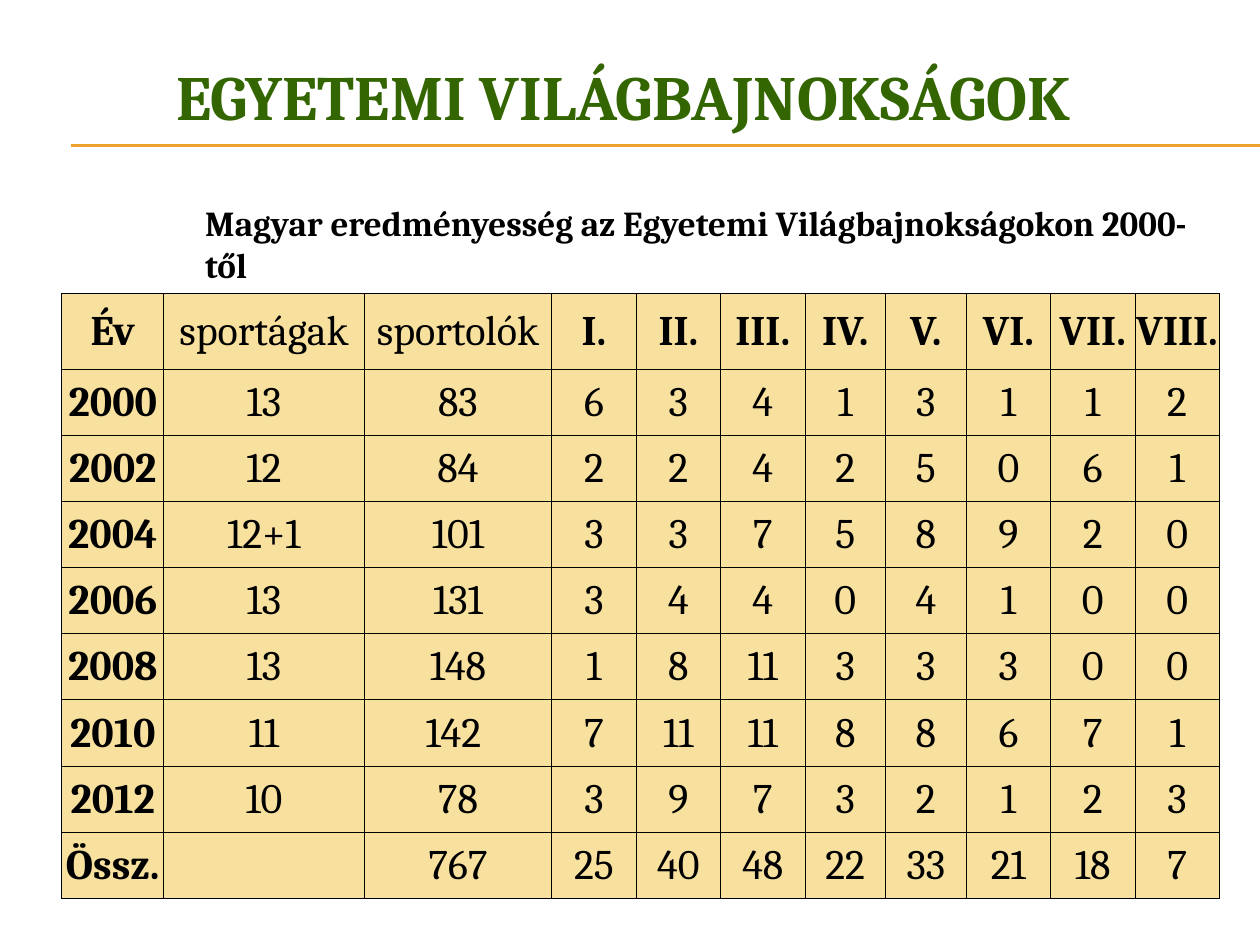
from dataclasses import dataclass

from lxml import etree
from pptx import Presentation
from pptx.dml.color import RGBColor
from pptx.enum import shapes, text
from pptx.oxml import ns
from pptx.util import Inches, Pt


@dataclass(frozen=True)
class Theme:
    font: str = "Cambria"
    title: RGBColor = RGBColor(0x33, 0x66, 0x00)
    ink: RGBColor = RGBColor(0x00, 0x00, 0x00)
    rule: RGBColor = RGBColor(0xF0, 0xA2, 0x2E)
    cell: RGBColor = RGBColor(0xF8, 0xE1, 0x9F)
    title_size: Pt = Pt(36)
    subtitle_size: Pt = Pt(20)
    table_size: Pt = Pt(24)
    rule_width: Pt = Pt(0.75)
    border_width: Pt = Pt(0.5)


theme = Theme()


def format_text(paragraph, size, color, bold, align=text.PP_ALIGN.LEFT):
    paragraph.alignment = align
    for run in paragraph.runs:
        run.font.name = theme.font
        run.font.size = size
        run.font.bold = bold
        run.font.color.rgb = color


def add_borders(cell):
    """Draw all four cell borders; they must come before the fill in tcPr."""
    properties = cell._tc.get_or_add_tcPr()
    for position, side in enumerate(("a:lnL", "a:lnR", "a:lnT", "a:lnB")):
        border = etree.Element(ns.qn(side), w=str(theme.border_width))
        fill = etree.SubElement(border, ns.qn("a:solidFill"))
        etree.SubElement(fill, ns.qn("a:srgbClr"), val=str(theme.ink))
        properties.insert(position, border)


presentation = Presentation()
presentation.slide_width = Inches(10)
presentation.slide_height = Inches(7.5)
slide = presentation.slides.add_slide(presentation.slide_layouts[5])

# Double rule under the title
for y in (1.15, 1.16):
    rule = slide.shapes.add_connector(
        shapes.MSO_CONNECTOR.STRAIGHT, Inches(0.56), Inches(y), Inches(10), Inches(y))
    rule.line.color.rgb = theme.rule
    rule.line.width = theme.rule_width
    etree.SubElement(rule._element.spPr, ns.qn("a:effectLst"))

# Title and subtitle
title = slide.shapes.title
title.left, title.top = Inches(1.3), Inches(0.36)
title.width, title.height = Inches(8.7), Inches(0.79)
title.text_frame.text = "EGYETEMI VILÁGBAJNOKSÁGOK"
title.text_frame.auto_size = text.MSO_AUTO_SIZE.NONE
title.text_frame.vertical_anchor = text.MSO_ANCHOR.MIDDLE
format_text(title.text_frame.paragraphs[0], theme.title_size, theme.title, True)

subtitle = slide.shapes.add_textbox(Inches(1.53), Inches(1.55), Inches(8.19), Inches(0.44))
subtitle.text_frame.word_wrap = True
subtitle.text_frame.text = "Magyar eredményesség az Egyetemi Világbajnokságokon 2000-től"
format_text(subtitle.text_frame.paragraphs[0], theme.subtitle_size, theme.ink, True)

# Results: year, sports, athletes, then the number of places I to VIII
results = [
    ["Év", "sportágak", "sportolók", "I.", "II.", "III.", "IV.", "V.", "VI.", "VII.", "VIII."],
    ["2000", "13", "83", 6, 3, 4, 1, 3, 1, 1, 2],
    ["2002", "12", "84", 2, 2, 4, 2, 5, 0, 6, 1],
    ["2004", "12+1", "101", 3, 3, 7, 5, 8, 9, 2, 0],
    ["2006", "13", "131", 3, 4, 4, 0, 4, 1, 0, 0],
    ["2008", "13", "148", 1, 8, 11, 3, 3, 3, 0, 0],
    ["2010", "11", "142 ", 7, 11, 11, 8, 8, 6, 7, 1],
    ["2012", "10", "78", 3, 9, 7, 3, 2, 1, 2, 3],
    ["Össz.", "", "767", 25, 40, 48, 22, 33, 21, 18, 7],
]
column_widths = [0.81, 1.59, 1.49] + [0.67] * 3 + [0.64] * 2 + [0.67] * 3
row_heights = [0.6] + [0.525] * 8

table = slide.shapes.add_table(
    len(results), len(column_widths),
    Inches(0.49), Inches(2.33), Inches(9.21), Inches(4.8)).table
table.first_row = table.horz_banding = False
for column, width in zip(table.columns, column_widths):
    column.width = Inches(width)
for row, height in zip(table.rows, row_heights):
    row.height = Inches(height)

for r, values in enumerate(results):
    for c, value in enumerate(values):
        cell = table.cell(r, c)
        cell.fill.solid()
        cell.fill.fore_color.rgb = theme.cell
        cell.margin_left = cell.margin_right = cell.margin_top = Inches(0.01)
        cell.margin_bottom = 0
        cell.vertical_anchor = text.MSO_ANCHOR.MIDDLE
        cell.text_frame.text = str(value)
        is_bold = c == 0 or (r == 0 and c > 2) or (r == 1 and c == 0)
        format_text(cell.text_frame.paragraphs[0], theme.table_size, theme.ink,
                    is_bold, text.PP_ALIGN.CENTER)
        add_borders(cell)

presentation.save("out.pptx")
